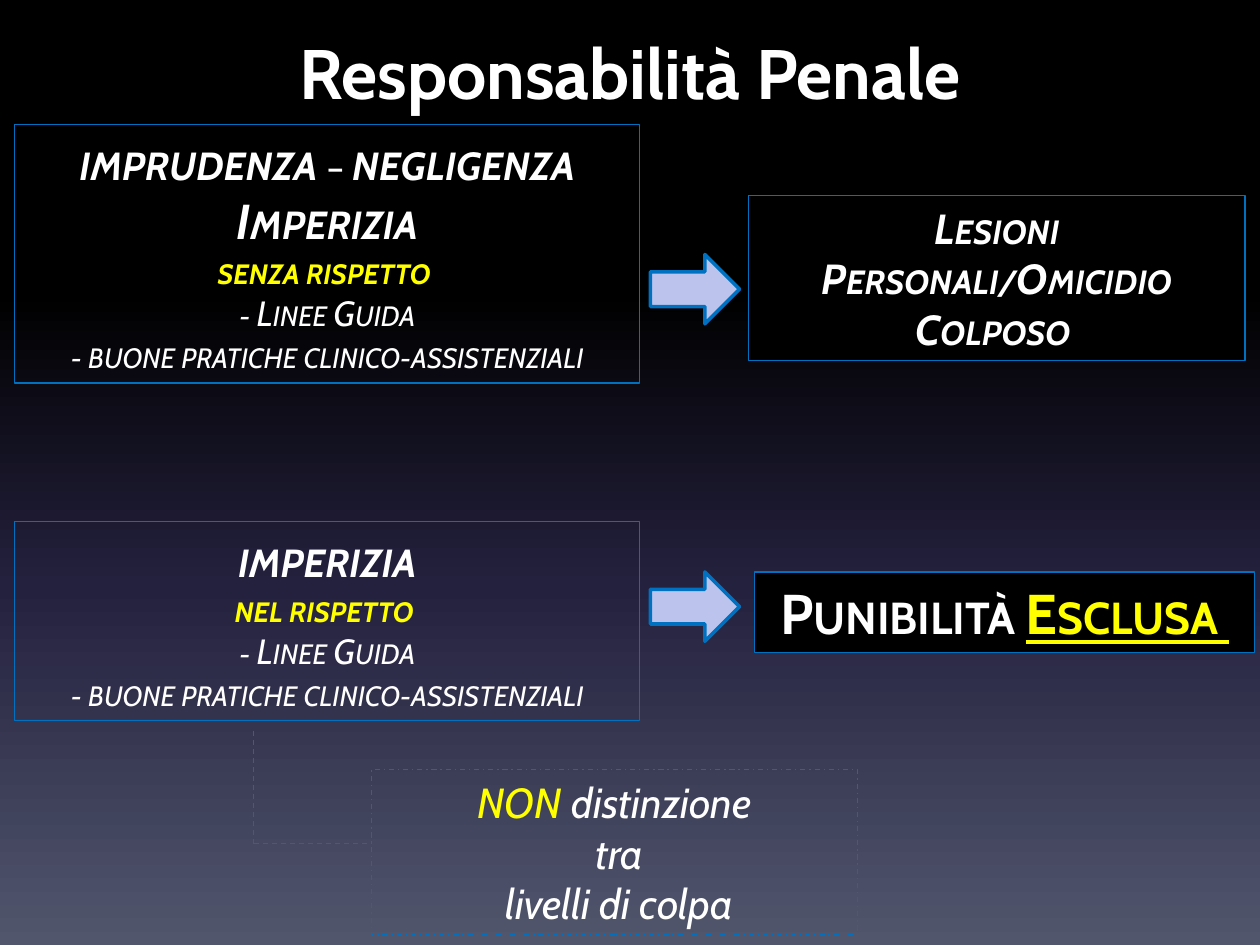
from lxml import etree
from pptx import Presentation
from pptx import util as u
from pptx.dml.color import RGBColor
from pptx.enum import dml, shapes, text
from pptx.oxml.ns import qn

COLOURS = {
    "white": "FFFFFF", "yellow": "FFFF00", "black": "000000",
    "blue": "0070C0", "arrow": "BCC4ED", "night": "24213E", "dusk": "51566D",
}


class Deck:
    """Hold the style and the current slide, and draw each kind of element."""

    font = "Cabin"

    def __init__(self, slide):
        self.slide = slide

    def colour(self, name):
        return RGBColor.from_string(COLOURS[name])

    def background(self, stops):
        fill = self.slide.background.fill
        fill.gradient()
        fill.gradient_angle = 270
        ramp = next(self.slide.element.iter(qn("a:gsLst")))
        ramp.clear()
        for percent, name in stops:
            stop = etree.SubElement(ramp, qn("a:gs"), pos=str(percent * 1000))
            etree.SubElement(stop, qn("a:srgbClr"), val=COLOURS[name])

    def outline(self, line, width=0.75, dash=None):
        line.color.rgb = self.colour("blue")
        line.width = u.Pt(width)
        if dash:
            line.dash_style = dash

    def fill_text(self, shape, paragraphs):
        frame = shape.text_frame
        frame.word_wrap = True
        frame.vertical_anchor = text.MSO_ANCHOR.MIDDLE
        for index, runs in enumerate(paragraphs):
            paragraph = frame.add_paragraph() if index else frame.paragraphs[0]
            paragraph.alignment = text.PP_ALIGN.CENTER
            for words, size, colour, style in runs:
                run = paragraph.add_run()
                run.text = words
                run.font.name = self.font
                run.font.size = u.Pt(size)
                run.font.color.rgb = self.colour(colour)
                run.font.bold = "b" in style
                run.font.italic = "i" in style
                run.font.underline = "u" in style
                if "s" in style:
                    run.font._element.set("cap", "small")

    def title(self, left, top, width, height, words):
        heading = self.slide.shapes.add_textbox(*map(u.Cm, (left, top, width, height)))
        self.fill_text(heading, [[(words, 40, "white", "b")]])

    def preset(self, kind, place, fill):
        shape = self.slide.shapes.add_shape(kind, *map(u.Cm, place))
        shape.shadow.inherit = False
        if fill:
            shape.fill.solid()
            shape.fill.fore_color.rgb = self.colour(fill)
        else:
            shape.fill.background()
        return shape

    def box(self, place, paragraphs, fill=None, dash=None):
        panel = self.preset(shapes.MSO_SHAPE.RECTANGLE, place, fill)
        self.outline(panel.line, dash=dash)
        self.fill_text(panel, paragraphs)

    def arrow(self, top):
        place = (13.11, top, 1.8, 1.4)
        pointer = self.preset(shapes.MSO_SHAPE.RIGHT_ARROW, place, "arrow")
        self.outline(pointer.line, 2)

    def dashed_line(self, *ends):
        link = self.slide.shapes.add_connector(
            shapes.MSO_CONNECTOR.STRAIGHT, *map(u.Cm, ends))
        self.outline(link.line, dash=dml.MSO_LINE.DASH)
        etree.SubElement(link._element.spPr, qn("a:effectLst"))


def main():
    prs = Presentation()
    prs.slide_width, prs.slide_height = u.Cm(25.4), u.Cm(19.05)
    deck = Deck(prs.slides.add_slide(prs.slide_layouts[6]))
    deck.background([(0, "black"), (31, "black"), (62, "night"), (100, "dusk")])

    guidelines = [
        [("- Linee Guida", 20, "white", "is")],
        [("- buone pratiche clinico-assistenziali", 20, "white", "is")],
    ]
    deck.title(1.27, 0.33, 22.86, 2.21, "Responsabilità Penale")
    deck.box((0.3, 2.51, 12.6, 5.21), [
        [("imprudenza ", 28, "white", "bis"), ("– ", 20, "white", ""),
         ("negligenza", 28, "white", "bis")],
        [("Imperizia", 28, "white", "bis")],
        [("senza rispetto ", 20, "yellow", "bis")],
    ] + guidelines)
    deck.box((0.3, 10.52, 12.6, 4.01), [
        [("imperizia", 28, "white", "bis")],
        [("nel rispetto ", 20, "yellow", "bis")],
    ] + guidelines)

    for arrow_top in (5.13, 11.53):
        deck.arrow(arrow_top)

    deck.box((15.09, 3.94, 10.01, 3.33), [
        [("Lesioni Personali/Omicidio", 24, "white", "bis")],
        [("Colposo ", 24, "white", "bis")],
    ], fill="black")
    deck.box((15.21, 11.53, 10.08, 1.63), [
        [("Punibilità ", 32, "white", "bs"), ("Esclusa ", 32, "yellow", "bsu")],
    ], fill="black")

    deck.box((7.49, 15.52, 9.8, 3.33), [
        [("NON ", 24, "yellow", "i"), ("distinzione", 24, "white", "i")],
        [(" tra", 24, "white", "i")],
        [(" livelli di colpa", 24, "white", "i")],
    ], dash=dml.MSO_LINE.DASH_DOT)
    branch_x, branch_y = 5.11, 17
    deck.dashed_line(branch_x, 14.73, branch_x, branch_y)
    deck.dashed_line(branch_x, branch_y, 7.49, branch_y)

    prs.save("out.pptx")


if __name__ == "__main__":
    main()
